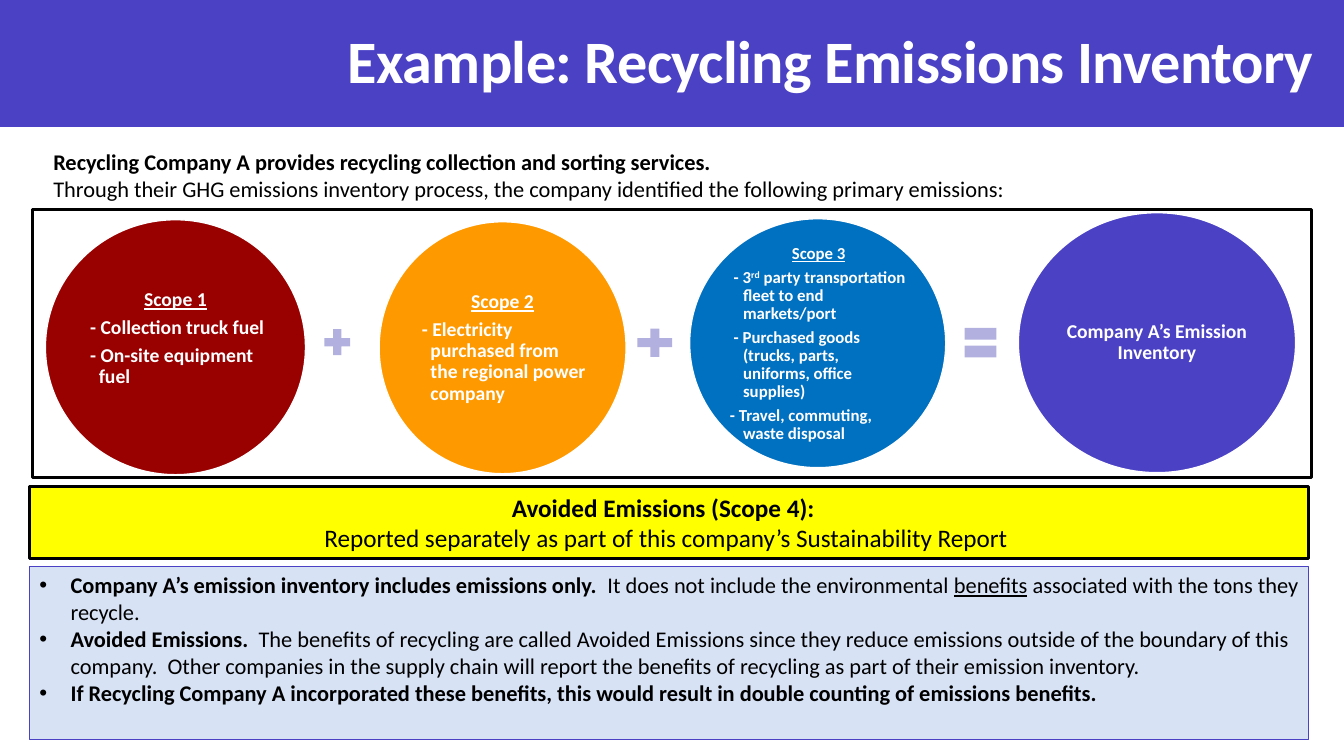
from lxml import etree
from pptx import Presentation
from pptx.dml.color import RGBColor
from pptx.enum.shapes import MSO_SHAPE
from pptx.enum.text import MSO_ANCHOR, MSO_AUTO_SIZE, PP_ALIGN
from pptx.oxml.ns import qn
from pptx.util import Inches, Pt

RECT, OVAL = MSO_SHAPE.RECTANGLE, MSO_SHAPE.OVAL
PLUS, EQUAL = MSO_SHAPE.MATH_PLUS, MSO_SHAPE.MATH_EQUAL
LEFT, MID, RIGHT = PP_ALIGN.LEFT, PP_ALIGN.CENTER, PP_ALIGN.RIGHT
TOP, CENTER = MSO_ANCHOR.TOP, MSO_ANCHOR.MIDDLE
HEX = {"violet": "4A41C5", "lilac": "B2B0DF", "red": "990000",
       "orange": "FF9900", "blue": "0070C0", "yellow": "FFFF00",
       "pale": "D7E2F5", "white": "FFFFFF", "black": "000000"}
COLOR = {name: RGBColor.from_string(code) for name, code in HEX.items()}
BOLD, PLAIN = {"bold": True}, {"bold": False}
HEAD = {"bold": True, "underline": True}


def draw(kind, at, fill=None, line=None, width=1):
    shape = slide.shapes.add_shape(kind, *map(Inches, at))
    shape.shadow.inherit = False
    if fill:
        shape.fill.solid()
        shape.fill.fore_color.rgb = COLOR[fill]
    else:
        shape.fill.background()
    if line:
        shape.line.color.rgb = COLOR[line]
        shape.line.width = Pt(width)
    else:
        shape.line.fill.background()
    return shape


def write(frame, paras, size, color="black", anchor=TOP, space=1, after=0):
    """Each paragraph is an alignment and a list of (text, format) runs."""
    frame.word_wrap = True
    frame.auto_size = MSO_AUTO_SIZE.NONE
    frame.vertical_anchor = anchor
    for i, (align, runs) in enumerate(paras):
        para = frame.add_paragraph() if i else frame.paragraphs[0]
        look = {"alignment": align, "line_spacing": space,
                "space_before": Pt(0), "space_after": Pt(after)}
        for key, value in look.items():
            setattr(para, key, value)
        for text, form in runs:
            run = para.add_run()
            run.text = text
            run.font.color.rgb = COLOR[color]
            for key, value in {"name": "Calibri", "size": Pt(size), **form}.items():
                setattr(run.font, key, value)


deck = Presentation()
deck.slide_width, deck.slide_height = Inches(13.33), Inches(7.5)
slide = deck.slides.add_slide(deck.slide_layouts[1])
title, body = slide.placeholders

# Title on its band
band = draw(RECT, (0, 0, 13.33, 1.26), "violet")
title.element.addprevious(band.element)
title.left, title.top, title.width, title.height = map(Inches, (1.4, 0.16, 11.72, 0.95))
write(title.text_frame, [(RIGHT, [("Example: Recycling Emissions Inventory", BOLD)])],
      43, "white", CENTER, 0.9)
for run in title.text_frame.paragraphs[0].runs:
    run.font._element.set("spc", "-40")

# Introduction
intro = slide.shapes.add_textbox(*map(Inches, (0.43, 1.42, 12.15, 0.65)))
write(intro.text_frame, [
    (LEFT, [("Recycling Company A provides recycling collection and sorting services.", BOLD)]),
    (LEFT, [("Through their GHG emissions inventory process, the company identified "
             "the following primary emissions:", PLAIN)])], 16)

# Scope circles: circle, fill, text area, text size, heading, items
scopes = [
    ((0.45, 2.18, 2.58, 2.53), "red", (0.83, 2.56, 1.82, 1.6), 14, ("Scope 1", HEAD),
     [" - Collection truck fuel", " - On-site equipment fuel"]),
    ((3.76, 2.2, 2.45, 2.5), "orange", (4.12, 2.57, 1.73, 1.77), 14, ("Scope 2", HEAD),
     [" - Electricity purchased from the regional power company"]),
    ((6.84, 2.17, 2.54, 2.47), "blue", (7.22, 2.54, 1.8, 1.75), 12, ("Scope 3", HEAD),
     [" - 3^rd^ party transportation fleet to end markets/port",
      " - Purchased goods (trucks, parts, uniforms, office supplies)",
      "- Travel, commuting, waste disposal"]),
    ((10.1, 2.11, 2.75, 2.58), "violet", (10.5, 2.49, 1.95, 1.82), 14,
     ("Company A’s Emission Inventory", BOLD), []),
]
for oval, fill, area, size, head, items in scopes:
    draw(OVAL, oval, fill, "white")
    frame = slide.shapes.add_textbox(*map(Inches, area)).text_frame
    for side in ("left", "right", "top", "bottom"):
        setattr(frame, "margin_" + side, Inches(0.02))
    lines = [(LEFT, [(part, BOLD) for part in item.split("^")]) for item in items]
    write(frame, [(MID, [head])] + lines, size, "white", CENTER, 0.9, round(size * 0.33, 1))
    for para in frame.paragraphs[1:]:
        props = para._p.get_or_add_pPr()
        props.set("marL", str(Inches(0.13)))
        props.set("indent", str(Inches(-0.13)))
        for run in para.runs[1:2]:
            run.font._element.set("baseline", "30000")

# Signs between the circles
for kind, at in [(PLUS, (3.17, 3.22, 0.35, 0.35)), (PLUS, (6.26, 3.21, 0.47, 0.38)),
                 (EQUAL, (9.51, 3.15, 0.43, 0.5))]:
    draw(kind, at, "lilac")

# Notes on the inventory
body.left, body.top, body.width, body.height = map(Inches, (0.29, 5.62, 12.69, 1.72))
body.fill.solid()
body.fill.fore_color.rgb = COLOR["pale"]
body.line.color.rgb = COLOR["violet"]
body.line.width = Pt(0.75)
write(body.text_frame, [
    (LEFT, [("Company A’s emission inventory includes emissions only.  ", BOLD),
            ("It does not include the environmental ", PLAIN),
            ("benefits", {"bold": False, "underline": True}),
            (" associated with the tons they recycle.", PLAIN)]),
    (LEFT, [("Avoided Emissions.  ", BOLD),
            ("The benefits of recycling are called Avoided Emissions since they reduce "
             "emissions outside of the boundary of this company.  Other companies in the "
             "supply chain will report the benefits of recycling as part of their "
             "emission inventory.", PLAIN)]),
    (LEFT, [("If Recycling Company A incorporated these benefits, this would result in "
             "double counting of emissions benefits.", BOLD)])], 16)
for para in body.text_frame.paragraphs:
    props = para._p.get_or_add_pPr()
    props.set("marL", str(Inches(0.31)))
    props.set("indent", str(Inches(-0.31)))
    etree.SubElement(props, qn("a:buFont")).set("typeface", "Arial")
    etree.SubElement(props, qn("a:buChar")).set("char", "•")

# Avoided emissions bar
bar = draw(RECT, (0.29, 4.83, 12.69, 0.71), "yellow", "black", 2.25)
write(bar.text_frame, [
    (MID, [("Avoided Emissions (Scope 4):  ", BOLD)]),
    (MID, [("Reported separately as part of this company’s Sustainability Report ", PLAIN)])], 18)

# Frame around the circles
draw(RECT, (0.32, 2.08, 12.69, 2.66), None, "black", 2.25)

deck.save("out.pptx")
